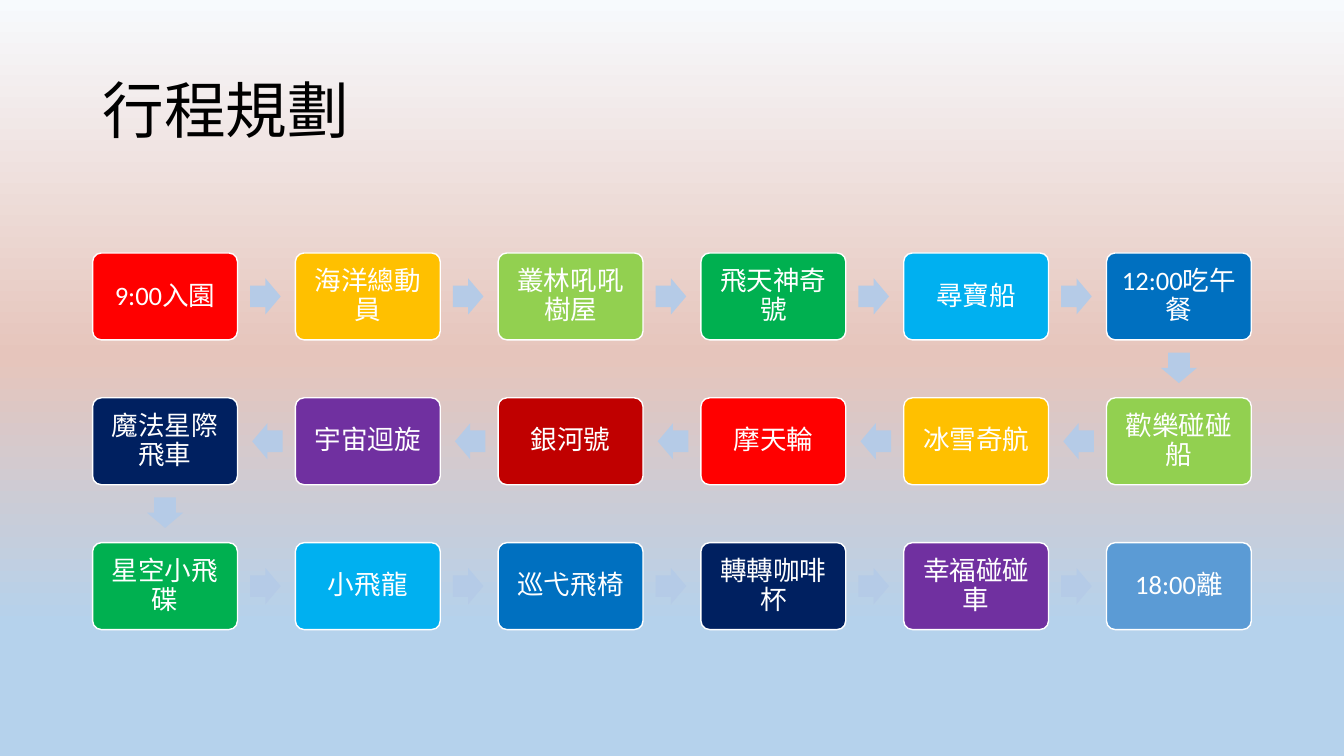
from copy import deepcopy

from pptx import Presentation
from pptx.dml.color import RGBColor
from pptx.enum.shapes import MSO_SHAPE as Shape
from pptx.enum.text import MSO_ANCHOR as Anchor, PP_ALIGN as Align
from pptx.util import Cm, Pt


def color(value):
    return RGBColor.from_string(value)


def write(shape, text, size, text_color, alignment):
    frame = shape.text_frame
    frame.text = text
    frame.word_wrap = True
    frame.vertical_anchor = Anchor.MIDDLE
    paragraph = frame.paragraphs[0]
    paragraph.alignment = alignment
    paragraph.line_spacing = 0.9
    font_format = {"name": "Calibri", "size": Pt(size), "bold": False}
    for name, value in font_format.items():
        setattr(paragraph.font, name, value)
    paragraph.font.color.rgb = color(text_color)


presentation = Presentation()
presentation.slide_width = Cm(33.87)
presentation.slide_height = Cm(19.05)
slide = presentation.slides.add_slide(presentation.slide_layouts[5])

background = slide.background.fill
background.gradient()
background.gradient_angle = 270
stop_list = slide.element.xpath(".//a:gsLst")[0]
stop_list.append(deepcopy(stop_list[-1]))
gradient = [(0, "F7FAFD"), (0.47, "E6C5BC"), (0.83, "B5D2EC")]
for stop, (position, stop_color) in zip(background.gradient_stops, gradient):
    stop.position = position
    stop.color.rgb = color(stop_color)

title = slide.shapes.title
title_place = {"left": Cm(2.33), "top": Cm(1.01), "width": Cm(29.21), "height": Cm(3.68)}
for name, value in title_place.items():
    setattr(title, name, value)
write(title, "行程規劃", 44, "000000", Align.LEFT)

stops = [
    ("9:00入園", "FF0000"),
    ("海洋總動員", "FFC000"),
    ("叢林吼吼樹屋", "92D050"),
    ("飛天神奇號", "00B050"),
    ("尋寶船", "00B0F0"),
    ("12:00吃午餐", "0070C0"),
    ("歡樂碰碰船", "92D050"),
    ("冰雪奇航", "FFC000"),
    ("摩天輪", "FF0000"),
    ("銀河號", "C00000"),
    ("宇宙迴旋", "7030A0"),
    ("魔法星際飛車", "002060"),
    ("星空小飛碟", "00B050"),
    ("小飛龍", "00B0F0"),
    ("巡弋飛椅", "0070C0"),
    ("轉轉咖啡杯", "002060"),
    ("幸福碰碰車", "7030A0"),
    ("18:00離", "5B9BD5"),
]
columns = 6
first_x, first_y = 4.16, 7.47
column_step, row_step = 5.11, 3.65
box_width, box_height = 3.65, 2.19
arrow_width, arrow_height = 0.77, 0.91
arrow_directions = {0: (2.53, 0), 90: (0, 1.8), 180: (-2.53, 0)}
margins = ("margin_left", "margin_right", "margin_top", "margin_bottom")

for index, (label, box_color) in enumerate(stops):
    row, step = divmod(index, columns)
    backward = row % 2 == 1
    column = columns - 1 - step if backward else step
    x = first_x + column * column_step
    y = first_y + row * row_step

    box = slide.shapes.add_shape(
        Shape.ROUNDED_RECTANGLE,
        Cm(x - box_width / 2), Cm(y - box_height / 2), Cm(box_width), Cm(box_height),
    )
    box.adjustments[0] = 0.1
    box.shadow.inherit = False
    box.fill.solid()
    box.fill.fore_color.rgb = color(box_color)
    box.line.color.rgb = color("FFFFFF")
    box.line.width = Pt(1)
    for margin in margins:
        setattr(box.text_frame, margin, Cm(0.2))
    write(box, label, 19, "FFFFFF", Align.CENTER)

    if index == len(stops) - 1:
        break
    if step == columns - 1:
        rotation = 90
    else:
        rotation = 180 if backward else 0
    shift_x, shift_y = arrow_directions[rotation]
    arrow = slide.shapes.add_shape(
        Shape.RIGHT_ARROW,
        Cm(x + shift_x - arrow_width / 2), Cm(y + shift_y - arrow_height / 2),
        Cm(arrow_width), Cm(arrow_height),
    )
    arrow.adjustments[0] = 0.6
    arrow.adjustments[1] = 0.5
    arrow.rotation = rotation
    arrow.shadow.inherit = False
    arrow.fill.solid()
    arrow.fill.fore_color.rgb = color("B5CBE7")
    arrow.line.fill.background()

presentation.save("out.pptx")
